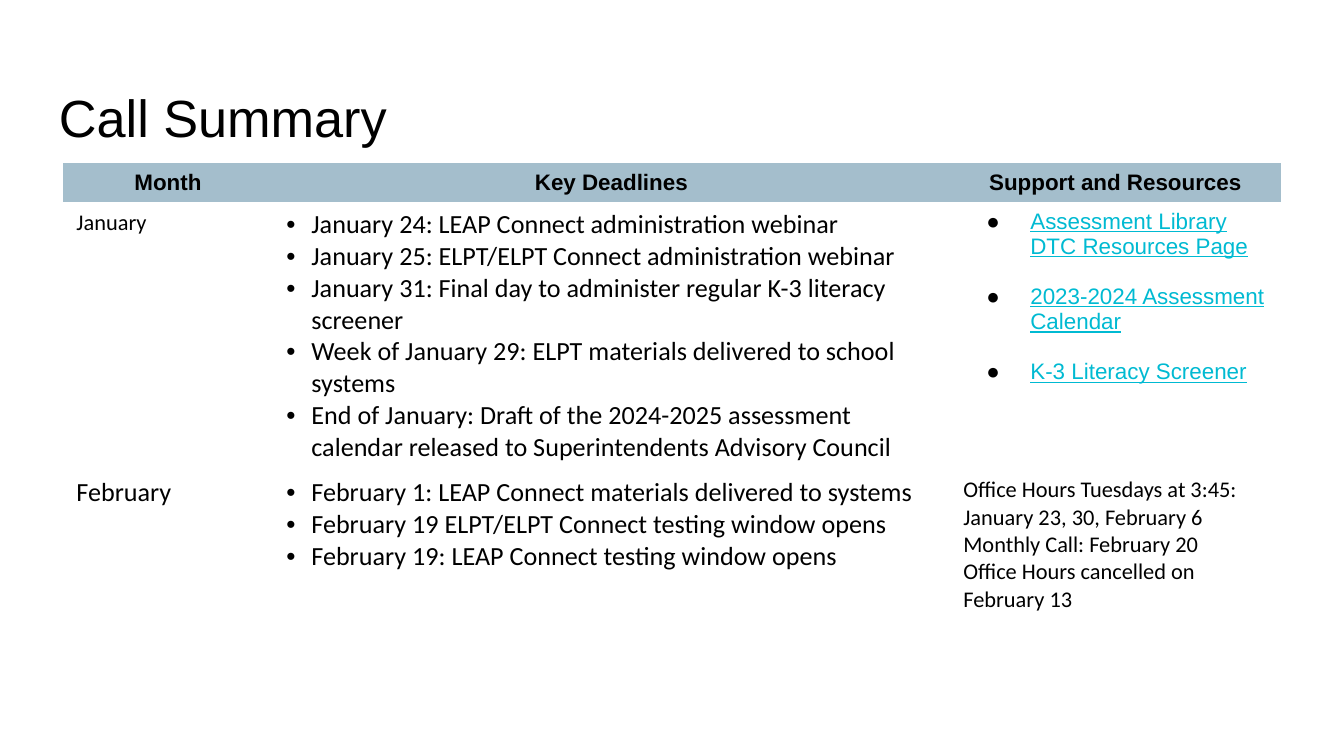
from lxml import etree
from pptx import Presentation
from pptx.dml.color import RGBColor
from pptx.enum.text import MSO_ANCHOR, MSO_AUTO_SIZE, PP_ALIGN
from pptx.oxml.ns import qn
from pptx.util import Pt

CENTER, LEFT = PP_ALIGN.CENTER, PP_ALIGN.LEFT
TOP = MSO_ANCHOR.TOP
NO_AUTOFIT = MSO_AUTO_SIZE.NONE
PX_PER_INCH = 134.4
PLAIN_TABLE = "{2D5ABB26-0587-4C30-8999-92F81FD0307C}"
BLACK, HEADER_FILL, LINK = "000000", "A4BECC", "00BAD2"

COLUMNS = [210, 677, 331]
ROWS = [39, 268, 164]
HEADINGS = ["Month", "Key Deadlines", "Support and Resources"]
JANUARY = [
    "January 24: LEAP Connect administration webinar",
    "January 25: ELPT/ELPT Connect administration webinar",
    "January 31: Final day to administer regular K-3 literacy screener",
    "Week of January 29: ELPT materials delivered to school systems",
    "End of January: Draft of the 2024-2025 assessment calendar released to "
    "Superintendents Advisory Council",
]
FEBRUARY = [
    "February 1: LEAP Connect materials delivered to systems",
    "February 19 ELPT/ELPT Connect testing window opens",
    "February 19: LEAP Connect testing window opens",
]
RESOURCES = [
    "Assessment Library DTC Resources Page",
    "2023-2024 Assessment Calendar",
    "K-3 Literacy Screener",
]
OFFICE_HOURS = [
    "Office Hours Tuesdays at 3:45: January 23, 30, February 6",
    "Monthly Call: February 20",
    "Office Hours cancelled on February 13",
]


def px(length):
    """Turn whole pixels into EMU."""
    return round(length * 914400 / PX_PER_INCH)


def color(value):
    """Turn a hex string into a colour."""
    return RGBColor.from_string(value)


def add_bullet(para, mark, indent, hang):
    """Give a paragraph a black bullet and a hanging indent."""
    props = para._p.get_or_add_pPr()
    props.set("marL", str(px(indent)))
    props.set("indent", str(-px(hang)))
    tint = etree.SubElement(props, qn("a:buClr"))
    etree.SubElement(tint, qn("a:srgbClr")).set("val", BLACK)
    etree.SubElement(props, qn("a:buFont")).set("typeface", "Arial")
    etree.SubElement(props, qn("a:buChar")).set("char", mark)


def write_span(para, text, size, face, tint=BLACK, bold=False, underline=False):
    """Add one formatted run to a paragraph."""
    span = para.add_run()
    span.text = text
    font = span.font
    font.size, font.name = Pt(size), face
    font.bold, font.underline = bold, underline
    font.color.rgb = color(tint)


def fill_cell(cell, lines, size, face="Calibri", bullet=None, gap=0,
              align=LEFT, fill=None, **style):
    """Write one paragraph per line into a table cell."""
    if fill:
        cell.fill.solid()
        cell.fill.fore_color.rgb = color(fill)
    else:
        cell.fill.background()
    cell.vertical_anchor = TOP
    frame = cell.text_frame
    for index, line in enumerate(lines):
        para = frame.add_paragraph() if index else frame.paragraphs[0]
        if bullet:
            add_bullet(para, *bullet)
        if index and gap:
            para.space_before = Pt(gap)
        para.alignment = align
        write_span(para, line, size, face, **style)


def place_title(page, left, top, width, height):
    """Move the title placeholder into its box and write the title."""
    title = page.shapes.title
    title.left, title.top = px(left), px(top)
    title.width, title.height = px(width), px(height)
    frame = title.text_frame
    frame.margin_left = frame.margin_right = frame.margin_bottom = px(13)
    frame.margin_top = px(19)
    frame.word_wrap, frame.auto_size = True, NO_AUTOFIT
    frame.vertical_anchor = TOP
    para = frame.paragraphs[0]
    para.alignment = LEFT
    write_span(para, "Call Summary", 28, "Arial")


def place_schedule(page, left, top):
    """Build the table of months, deadlines and resources."""
    table = page.shapes.add_table(len(ROWS), len(COLUMNS), px(left), px(top),
                                  px(sum(COLUMNS)), px(sum(ROWS))).table
    table.first_row = table.horz_banding = False
    table._tbl.tblPr.find(qn("a:tableStyleId")).text = PLAIN_TABLE
    for column, width in zip(table.columns, COLUMNS):
        column.width = px(width)
    for row, height in zip(table.rows, ROWS):
        row.height = px(height)
    for index, heading in enumerate(HEADINGS):
        fill_cell(table.cell(0, index), [heading], 12, "Arial", align=CENTER,
                  fill=HEADER_FILL, bold=True)
    months = [("January", 12, JANUARY), ("February", 14, FEBRUARY)]
    for index, (month, size, deadlines) in enumerate(months, 1):
        fill_cell(table.cell(index, 0), [month], size)
        fill_cell(table.cell(index, 1), deadlines, 14, bullet=("•", 25, 25))
    fill_cell(table.cell(1, 2), RESOURCES, 12, "Arial", bullet=("●", 67, 44),
              gap=13.5, tint=LINK, underline=True)
    fill_cell(table.cell(2, 2), OFFICE_HOURS, 12)


def main():
    """Build and save the deck."""
    deck = Presentation()
    deck.slide_width, deck.slide_height = px(1344), px(756)
    page = deck.slides.add_slide(deck.slide_layouts[5])
    place_title(page, 46, 66, 1253, 85)
    place_schedule(page, 63, 163)
    deck.save("out.pptx")


if __name__ == "__main__":
    main()
